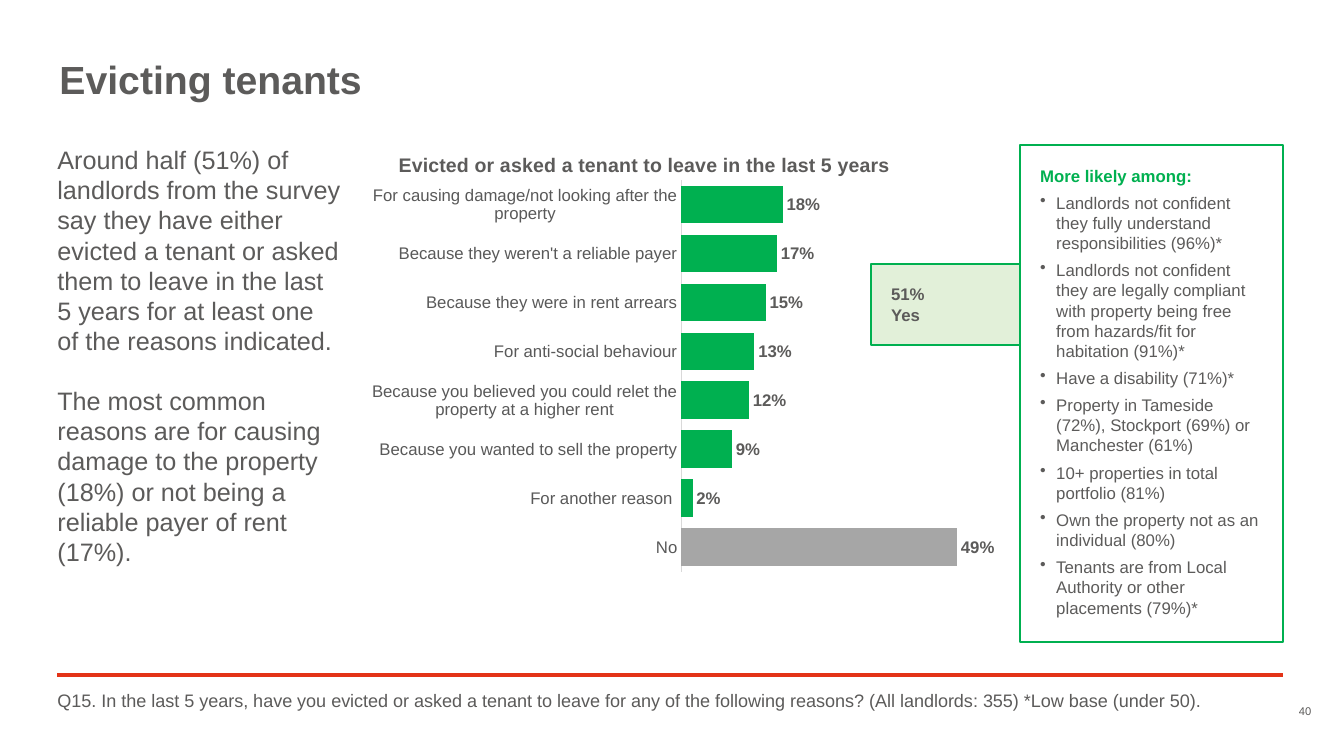
from lxml import etree
from pptx import Presentation
from pptx.chart.data import CategoryChartData
from pptx.dml.color import RGBColor
from pptx.enum.chart import XL_CHART_TYPE as ChartType
from pptx.enum.chart import XL_LABEL_POSITION as LabelPosition
from pptx.enum.chart import XL_TICK_MARK as TickMark
from pptx.enum.shapes import MSO_CONNECTOR as Connector
from pptx.enum.shapes import MSO_SHAPE as Shape
from pptx.enum.text import MSO_ANCHOR as Anchor
from pptx.enum.text import PP_ALIGN as Align
from pptx.oxml.ns import qn
from pptx.util import Pt

FONT = "Arial"
TEXT_GREY = RGBColor(0x5C, 0x5B, 0x5A)
AXIS_TEXT = RGBColor(0x59, 0x59, 0x59)
AXIS_LINE = RGBColor(0xD9, 0xD9, 0xD9)
BAR_GREY = RGBColor(0xA6, 0xA6, 0xA6)
GREEN = RGBColor(0x00, 0xB0, 0x50)
PALE_GREEN = RGBColor(0xE2, 0xF0, 0xD9)
RED = RGBColor(0xE3, 0x33, 0x17)

SUMMARY = [
    "Around half (51%) of landlords from the survey say they have either evicted "
    "a tenant or asked them to leave in the last 5 years for at least one of the "
    "reasons indicated.",
    "The most common reasons are for causing damage to the property (18%) or not "
    "being a reliable payer of rent (17%).",
]
REASONS = [
    ("For causing damage/not looking after the property", 0.18),
    ("Because they weren't a reliable payer", 0.17),
    ("Because they were in rent arrears", 0.15),
    ("For anti-social behaviour", 0.13),
    ("Because you believed you could relet the property at a higher rent", 0.12),
    ("Because you wanted to sell the property", 0.09),
    ("For another reason ", 0.02),
    ("No", 0.49),
]
LIKELY_GROUPS = [
    "Landlords not confident they fully understand responsibilities (96%)*",
    "Landlords not confident they are legally compliant with property being free "
    "from hazards/fit for habitation (91%)*",
    "Have a disability (71%)*",
    "Property in Tameside (72%), Stockport (69%) or Manchester (61%)",
    "10+ properties in total portfolio (81%)",
    "Own the property not as an individual (80%)",
    "Tenants are from Local Authority or other placements (79%)*",
]
QUESTION = (
    "Q15. In the last 5 years, have you evicted or asked a tenant to leave for any "
    "of the following reasons? (All landlords: 355) *Low base (under 50)."
)


def style_font(font, size, color=TEXT_GREY, bold=False):
    font.name = FONT
    font.size = Pt(size)
    font.bold = bold
    font.color.rgb = color


def set_margins(frame, margin):
    frame.margin_left = frame.margin_right = Pt(margin)
    frame.margin_top = frame.margin_bottom = Pt(margin)


def add_paragraph(frame, text, size, color=TEXT_GREY, bold=False):
    first = frame.paragraphs[0]
    paragraph = frame.add_paragraph() if first.runs else first
    paragraph.text = text
    style_font(paragraph.font, size, color, bold)
    return paragraph


def add_text(slide, left, top, width, height, texts, size, bold=False):
    box = slide.shapes.add_textbox(Pt(left), Pt(top), Pt(width), Pt(height))
    frame = box.text_frame
    frame.word_wrap = True
    set_margins(frame, 0)
    for text in texts:
        add_paragraph(frame, text, size, bold=bold)
    return frame


def add_green_box(slide, left, top, width, height, fill=None):
    box = slide.shapes.add_shape(
        Shape.RECTANGLE, Pt(left), Pt(top), Pt(width), Pt(height))
    box.shadow.inherit = False
    if fill is None:
        box.fill.background()
    else:
        box.fill.solid()
        box.fill.fore_color.rgb = fill
    box.line.color.rgb = GREEN
    box.line.width = Pt(1.5)
    frame = box.text_frame
    frame.word_wrap = True
    frame.vertical_anchor = Anchor.TOP
    set_margins(frame, 14.4)
    return frame


def add_box_paragraph(frame, text, color=TEXT_GREY, bold=False, bullet=False):
    paragraph = add_paragraph(frame, text, 12, color, bold)
    paragraph.alignment = Align.LEFT
    paragraph.space_after = Pt(5)
    if bullet:
        properties = paragraph._p.get_or_add_pPr()
        properties.set("marL", str(Pt(11.5)))
        properties.set("indent", str(-Pt(11.5)))
        etree.SubElement(properties, qn("a:buChar")).set("char", "•")


def add_rule(slide, left, right, y):
    rule = slide.shapes.add_connector(
        Connector.STRAIGHT, Pt(left), Pt(y), Pt(right), Pt(y))
    rule.line.color.rgb = RED
    rule.line.width = Pt(3)
    etree.SubElement(rule._element.spPr, qn("a:effectLst"))


def set_layout(parent, index, **settings):
    for old in parent.findall(qn("c:layout")):
        parent.remove(old)
    layout = etree.Element(qn("c:layout"))
    manual = etree.SubElement(layout, qn("c:manualLayout"))
    for name, value in settings.items():
        etree.SubElement(manual, qn("c:" + name)).set("val", str(value))
    parent.insert(index, layout)


def add_reason_chart(slide, left, top, width, height):
    data = CategoryChartData(number_format="0%")
    data.categories = [reason for reason, share in REASONS]
    data.add_series("Series 1", [share for reason, share in REASONS])
    chart = slide.shapes.add_chart(
        ChartType.BAR_CLUSTERED, Pt(left), Pt(top), Pt(width), Pt(height), data).chart
    style_font(chart.font, 12)
    chart.has_legend = False

    # Title and plot placement
    chart.has_title = True
    add_paragraph(chart.chart_title.text_frame,
                  "Evicted or asked a tenant to leave in the last 5 years", 14, bold=True)
    set_layout(chart.chart_title._element, 1,
               xMode="edge", yMode="edge", x=0.03, y=0.03)
    set_layout(chart._chartSpace.chart.plotArea, 0, layoutTarget="inner",
               xMode="edge", yMode="edge", x=0.443, y=0.1, w=0.487, h=0.894)

    # Axes
    category_axis = chart.category_axis
    category_axis.reverse_order = True
    category_axis.major_tick_mark = TickMark.NONE
    category_axis.format.line.color.rgb = AXIS_LINE
    category_axis.format.line.width = Pt(0.75)
    style_font(category_axis.tick_labels.font, 12, AXIS_TEXT)
    value_axis = chart.value_axis
    value_axis.minimum_scale = 0
    value_axis.maximum_scale = 0.6
    value_axis.has_major_gridlines = False
    value_axis.visible = False

    # Bars and labels
    plot = chart.plots[0]
    plot.gap_width = 30
    plot.vary_by_categories = False
    series = plot.series[0]
    for index, (reason, share) in enumerate(REASONS):
        fill = series.points[index].format.fill
        fill.solid()
        fill.fore_color.rgb = BAR_GREY if reason == "No" else GREEN
    labels = series.data_labels
    labels.show_value = True
    labels.number_format = "0%"
    labels.number_format_is_linked = False
    labels.position = LabelPosition.OUTSIDE_END
    style_font(labels.font, 12, bold=True)


def main():
    presentation = Presentation()
    presentation.slide_width = Pt(960)
    presentation.slide_height = Pt(540)
    slide = presentation.slides.add_slide(presentation.slide_layouts[6])

    # Page number and footer rule
    number = add_text(slide, 908.6, 503.3, 28.1, 9.4, ["40"], 8)
    number.vertical_anchor = Anchor.BOTTOM
    number.paragraphs[0].alignment = Align.RIGHT
    add_rule(slide, 41, 916.6, 482.4)

    # Title and summary
    title = add_text(slide, 42.5, 43.2, 265, 30.2, ["Evicting tenants"], 28, bold=True)
    title.paragraphs[0].line_spacing = 0.9
    summary = add_text(slide, 41, 103, 203, 326.9, SUMMARY, 18)
    summary.paragraphs[1].space_before = Pt(21)

    # Chart of reasons
    add_reason_chart(slide, 265.7, 97.2, 496.8, 313.2)

    # Share of yes answers and the groups behind it
    yes_frame = add_green_box(slide, 622.1, 188.6, 106.5, 57.6, PALE_GREEN)
    add_box_paragraph(yes_frame, "51%\vYes", bold=True)
    groups_frame = add_green_box(slide, 728.6, 103.7, 188, 355)
    add_box_paragraph(groups_frame, "More likely among:", GREEN, bold=True)
    for group in LIKELY_GROUPS:
        add_box_paragraph(groups_frame, group, bullet=True)

    # Survey question
    question = add_text(slide, 41, 493.9, 875.6, 23, [QUESTION], 12.9)
    question.paragraphs[0].line_spacing = 0.9
    question.paragraphs[0].space_before = Pt(10)

    presentation.save("out.pptx")


if __name__ == "__main__":
    main()
